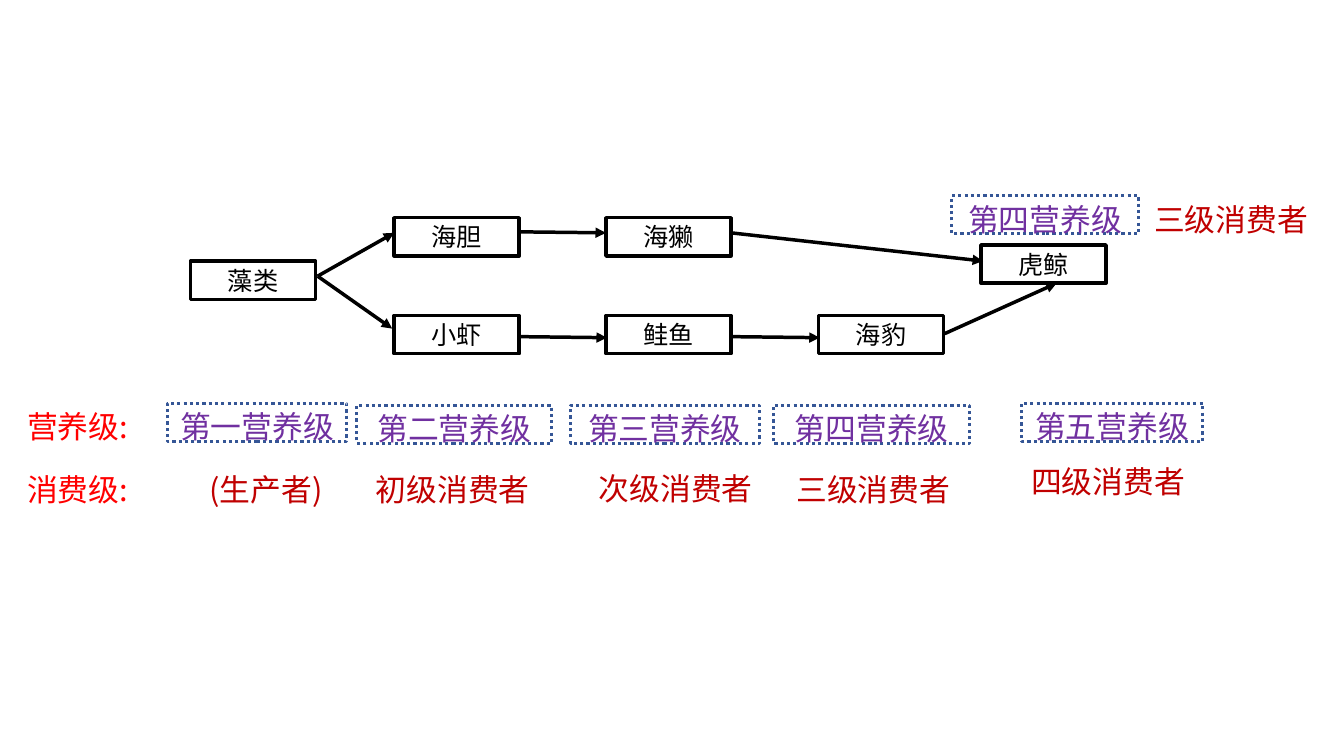
from dataclasses import dataclass

from lxml import etree
from pptx import Presentation
from pptx.dml.color import RGBColor
from pptx.enum.dml import MSO_LINE
from pptx.enum.shapes import MSO_CONNECTOR, MSO_SHAPE
from pptx.enum.text import MSO_ANCHOR, MSO_AUTO_SIZE, PP_ALIGN
from pptx.oxml.ns import qn
from pptx.util import Inches, Pt

RECT = MSO_SHAPE.RECTANGLE
STRAIGHT = MSO_CONNECTOR.STRAIGHT
DOTTED = MSO_LINE.ROUND_DOT
CENTER = PP_ALIGN.CENTER
LEFT = PP_ALIGN.LEFT
TOP = MSO_ANCHOR.TOP
MIDDLE = MSO_ANCHOR.MIDDLE
GROW = MSO_AUTO_SIZE.SHAPE_TO_FIT_TEXT


@dataclass(frozen=True)
class Theme:
    font: str = "Noto Sans CJK SC"
    black: str = "000000"
    white: str = "FFFFFF"
    blue: str = "355696"
    purple: str = "7030A0"
    red: str = "FF0000"
    dark_red: str = "C00000"
    species_size: int = 18
    label_size: int = 22
    solid_width: float = 2.5
    dotted_width: float = 2.25


THEME = Theme()
BOX_H = 0.38
SPECIES_W = 1.24
TEXT_H = 0.47

SPECIES = [
    ("藻类", 1.89, 2.59),
    ("海胆", 3.91, 2.16),
    ("小虾", 3.91, 3.13),
    ("海獭", 6.01, 2.16),
    ("鲑鱼", 6.01, 3.13),
    ("虎鲸", 9.73, 2.43),
    ("海豹", 8.12, 3.13),
]
ARROWS = [
    (3.15, 2.74, 3.91, 2.31),
    (3.15, 2.74, 3.89, 3.26),
    (5.15, 2.3, 6.01, 2.31),
    (5.16, 3.34, 6.02, 3.35),
    (7.25, 2.31, 9.75, 2.59),
    (7.26, 3.34, 8.13, 3.35),
    (9.37, 3.31, 10.48, 2.81),
]
TROPHIC_LEVELS = [
    ("第一营养级", 1.66, 4, 1.78),
    ("第二营养级", 3.54, 4.02, 1.93),
    ("第三营养级", 5.66, 4.02, 1.87),
    ("第四营养级", 7.67, 4.02, 1.95),
    ("第五营养级", 10.13, 4, 1.8),
    ("第四营养级", 9.44, 1.94, 1.85),
]
ROW_TITLES = [
    ("营养级:", 0.17, 4, 1.55),
    ("消费级:", 0.17, 4.62, 1.55),
]
CONSUMERS = [
    ("(生产者)", 1.98, 4.62, 1.55),
    ("初级消费者", 3.63, 4.62, 1.81),
    ("次级消费者", 5.84, 4.61, 1.88),
    ("三级消费者", 7.8, 4.62, 1.89),
    ("四级消费者", 10.13, 4.54, 1.91),
    ("三级消费者", 11.35, 1.94, 1.9),
]


def set_attrs(target, values):
    for name, value in values.items():
        setattr(target, name, value)


def write(tf, text, size, color, align):
    p = tf.paragraphs[0]
    p.alignment = align
    r = p.add_run()
    r.text = text
    set_attrs(r.font, {"size": Pt(size), "name": THEME.font})
    r.font.color.rgb = RGBColor.from_string(color)
    ea = etree.SubElement(r.font._element, qn("a:ea"))
    ea.set("typeface", THEME.font)
    return p


def add_box(s, text, place, size, color, line, anchor):
    sp = s.shapes.add_shape(RECT, *map(Inches, place))
    sp.shadow.inherit = False
    sp.fill.solid()
    sp.fill.fore_color.rgb = RGBColor.from_string(THEME.white)
    line_color, width, dash = line
    sp.line.color.rgb = RGBColor.from_string(line_color)
    set_attrs(sp.line, {"width": Pt(width), "dash_style": dash})
    set_attrs(sp.text_frame, {"word_wrap": True, "vertical_anchor": anchor})
    p = write(sp.text_frame, text, size, color, CENTER)
    before = etree.SubElement(p._p.get_or_add_pPr(), qn("a:spcBef"))
    etree.SubElement(before, qn("a:spcPct")).set("val", "50000")


def add_species(s, text, x, y):
    add_box(s, text, (x, y, SPECIES_W, BOX_H), THEME.species_size, THEME.black,
            (THEME.black, THEME.solid_width, None), MIDDLE)


def add_level(s, text, x, y, w):
    add_box(s, text, (x, y, w, BOX_H), THEME.label_size, THEME.purple,
            (THEME.blue, THEME.dotted_width, DOTTED), TOP)


def add_label(s, text, x, y, w, color):
    sp = s.shapes.add_textbox(*map(Inches, (x, y, w, TEXT_H)))
    set_attrs(sp.text_frame, {"word_wrap": True, "auto_size": GROW})
    write(sp.text_frame, text, THEME.label_size, color, LEFT)


def add_arrow(s, *ends):
    cx = s.shapes.add_connector(STRAIGHT, *map(Inches, ends))
    cx.line.color.rgb = RGBColor.from_string(THEME.black)
    cx.line.width = Pt(THEME.solid_width)
    etree.SubElement(cx.line._get_or_add_ln(), qn("a:tailEnd")).set("type", "triangle")
    etree.SubElement(cx._element.spPr, qn("a:effectLst"))


def main():
    prs = Presentation()
    set_attrs(prs, {"slide_width": Inches(13.33), "slide_height": Inches(7.5)})
    s = prs.slides.add_slide(prs.slide_layouts[6])
    for species in SPECIES:
        add_species(s, *species)
    for arrow in ARROWS:
        add_arrow(s, *arrow)
    for level in TROPHIC_LEVELS:
        add_level(s, *level)
    for title in ROW_TITLES:
        add_label(s, *title, THEME.red)
    for consumer in CONSUMERS:
        add_label(s, *consumer, THEME.dark_red)
    prs.save("out.pptx")


if __name__ == "__main__":
    main()
